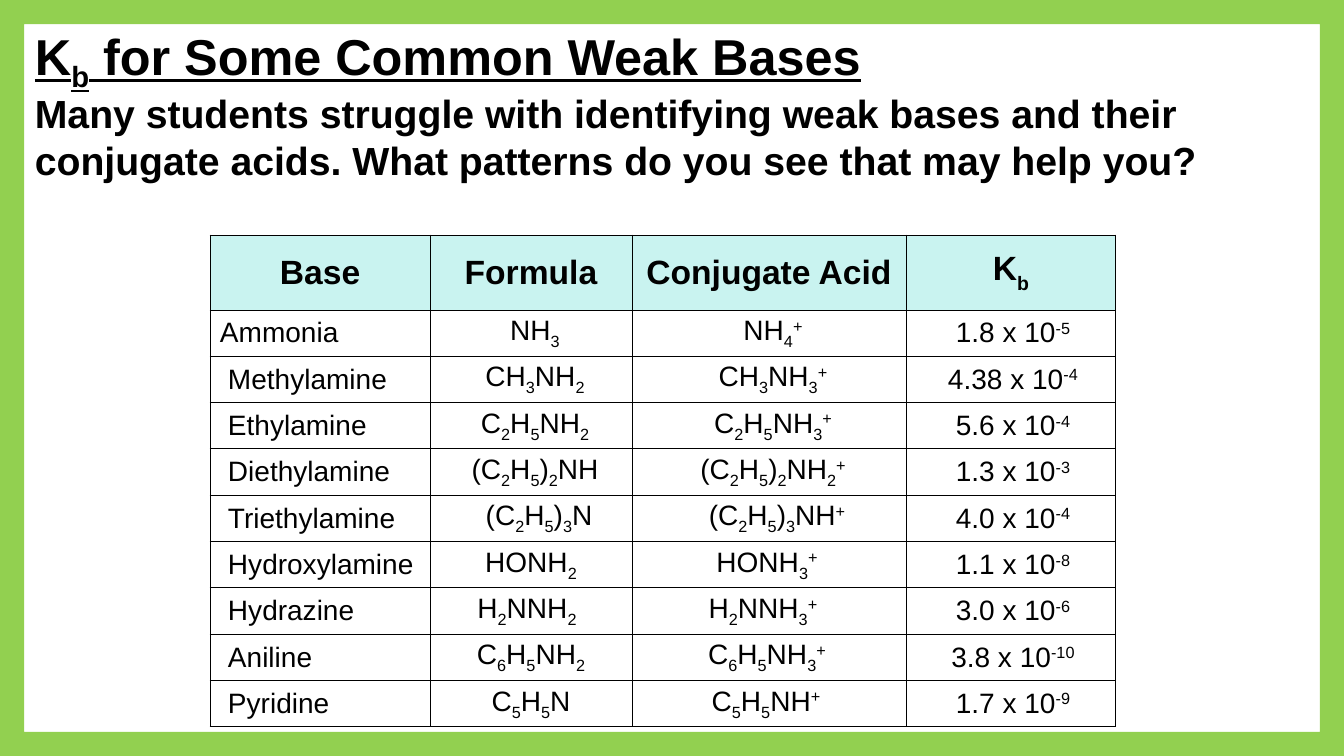
from itertools import groupby

from lxml import etree
from pptx import Presentation
from pptx import util as u
from pptx.dml.color import RGBColor
from pptx.enum import shapes, text
from pptx.oxml import ns

TITLE = [("K", 0), ("b", -25), (" for Some Common Weak Bases", 0)]
QUESTION = ("Many students struggle with identifying weak bases and their "
            "conjugate acids. What patterns do you see that may help you?")
HEADINGS = [[("Base", 0)], [("Formula", 0)], [("Conjugate Acid", 0)], [("K", 0), ("b", -30)]]
BASES = [
    ("Ammonia", "NH3", "NH4+", "1.8", "-5"),
    ("Methylamine", "CH3NH2", "CH3NH3+", "4.38", "-4"),
    ("Ethylamine", "C2H5NH2", "C2H5NH3+", "5.6", "-4"),
    ("Diethylamine", "(C2H5)2NH", "(C2H5)2NH2+", "1.3", "-3"),
    ("Triethylamine", "(C2H5)3N", "(C2H5)3NH+", "4.0", "-4"),
    ("Hydroxylamine", "HONH2", "HONH3+", "1.1", "-8"),
    ("Hydrazine", "H2NNH2", "H2NNH3+", "3.0", "-6"),
    ("Aniline", "C6H5NH2", "C6H5NH3+", "3.8", "-10"),
    ("Pyridine", "C5H5N", "C5H5NH+", "1.7", "-9"),
]
NUDGES = [(0, 4, 4, 2)] + [(4, 4, 4, 2)] * 3 + [
    (4, 8, 8, 2), (4, 0, -2, 2), (4, -4, -6, 2), (4, 0, -2, 2), (4, 0, -3, 2)]

THEME = {
    "font": "Arial", "ink": "000000", "paper": "FFFFFF", "header": "C9F3F0", "frame": "92D050",
    "title": 36, "question": 28, "heading": 24, "entry": 20, "rule": 0.75,
}
WIDTH, HEIGHT = 1344, 756
TITLE_BOX = (25, 17, 907, 84)
QUESTION_BOX = (25, 84, 1285, 105)
TABLE_LEFT, TABLE_TOP = 210, 235
COLUMNS = [220, 202, 274, 210]
HEADER_HEIGHT, BODY_HEIGHT = 75, 417
MARGIN, TIGHT = 10, 2
FRAME_ADJUST = 0.032


def px(length):
    return u.Emu(round(length * 914400 / 100.8))


def color(name):
    return RGBColor.from_string(THEME[name])


def apply(target, values):
    for key, value in values.items():
        setattr(target, key, value)


def write(paragraph, pieces, size, bold=False, underline=False):
    for words, baseline in pieces:
        run = paragraph.add_run()
        run.text = words
        apply(run.font, {"name": THEME["font"], "size": u.Pt(THEME[size]),
                         "bold": bold, "underline": underline})
        run.font.color.rgb = color("ink")
        if baseline:
            run.font._element.set("baseline", str(baseline * 1000))


def baseline_of(symbol):
    return -25 if symbol.isdigit() else 30 if symbol == "+" else 0


def chemical(formula):
    return [("".join(group), level) for level, group in groupby(formula, baseline_of)]


def add_heading(slide, box, pieces, size, anchor, underline=False):
    frame = slide.shapes.add_textbox(*map(px, box)).text_frame
    apply(frame, {"word_wrap": True, "vertical_anchor": anchor})
    write(frame.paragraphs[0], pieces, size, True, underline)


def add_borders(cell):
    properties = cell._tc.get_or_add_tcPr()
    for side in ("a:lnL", "a:lnR", "a:lnT", "a:lnB"):
        line = etree.SubElement(properties, ns.qn(side), w=str(u.Pt(THEME["rule"])))
        fill = etree.SubElement(line, ns.qn("a:solidFill"))
        etree.SubElement(fill, ns.qn("a:srgbClr"), val=THEME["ink"])


def fill_cell(cell, pieces, size, background, align, nudge):
    apply(cell, {
        "margin_left": px(MARGIN + 2 * max(nudge, 0)),
        "margin_right": px(MARGIN + 2 * max(-nudge, 0)),
        "margin_top": px(TIGHT), "margin_bottom": px(TIGHT),
        "vertical_anchor": text.MSO_ANCHOR.MIDDLE,
    })
    add_borders(cell)
    cell.fill.solid()
    cell.fill.fore_color.rgb = color(background)
    paragraph = cell.text_frame.paragraphs[0]
    paragraph.alignment = align
    write(paragraph, pieces, size, size == "heading")


def add_bases(slide):
    bases = slide.shapes.add_table(
        len(BASES) + 1, len(COLUMNS), px(TABLE_LEFT), px(TABLE_TOP),
        px(sum(COLUMNS)), px(HEADER_HEIGHT + BODY_HEIGHT)).table
    apply(bases, {"first_row": False, "horz_banding": False})
    for column, width in zip(bases.columns, COLUMNS):
        column.width = px(width)
    for index, row in enumerate(bases.rows):
        row.height = px(BODY_HEIGHT / len(BASES) if index else HEADER_HEIGHT)
    center, left = text.PP_ALIGN.CENTER, text.PP_ALIGN.LEFT
    for column, heading in enumerate(HEADINGS):
        fill_cell(bases.cell(0, column), heading, "heading", "header", center, 0)
    for row, (base, nudges) in enumerate(zip(BASES, NUDGES), 1):
        name, formula, acid, factor, power = base
        entries = [[(name, 0)], chemical(formula), chemical(acid),
                   [(f"{factor} x 10", 0), (power, 30)]]
        for column, (entry, nudge) in enumerate(zip(entries, nudges)):
            fill_cell(bases.cell(row, column), entry, "entry", "paper",
                      center if column else left, nudge)


def add_frame(slide):
    border = slide.shapes.add_shape(shapes.MSO_SHAPE.FRAME, 0, 0, px(WIDTH), px(HEIGHT))
    border.adjustments[0] = FRAME_ADJUST
    border.shadow.inherit = False
    border.fill.solid()
    border.fill.fore_color.rgb = color("frame")
    border.line.fill.background()


def main():
    deck = Presentation()
    apply(deck, {"slide_width": px(WIDTH), "slide_height": px(HEIGHT)})
    slide = deck.slides.add_slide(deck.slide_layouts[6])
    add_heading(slide, TITLE_BOX, TITLE, "title", text.MSO_ANCHOR.MIDDLE, True)
    add_bases(slide)
    add_heading(slide, QUESTION_BOX, [(QUESTION, 0)], "question", text.MSO_ANCHOR.TOP)
    add_frame(slide)
    deck.save("out.pptx")


if __name__ == "__main__":
    main()
